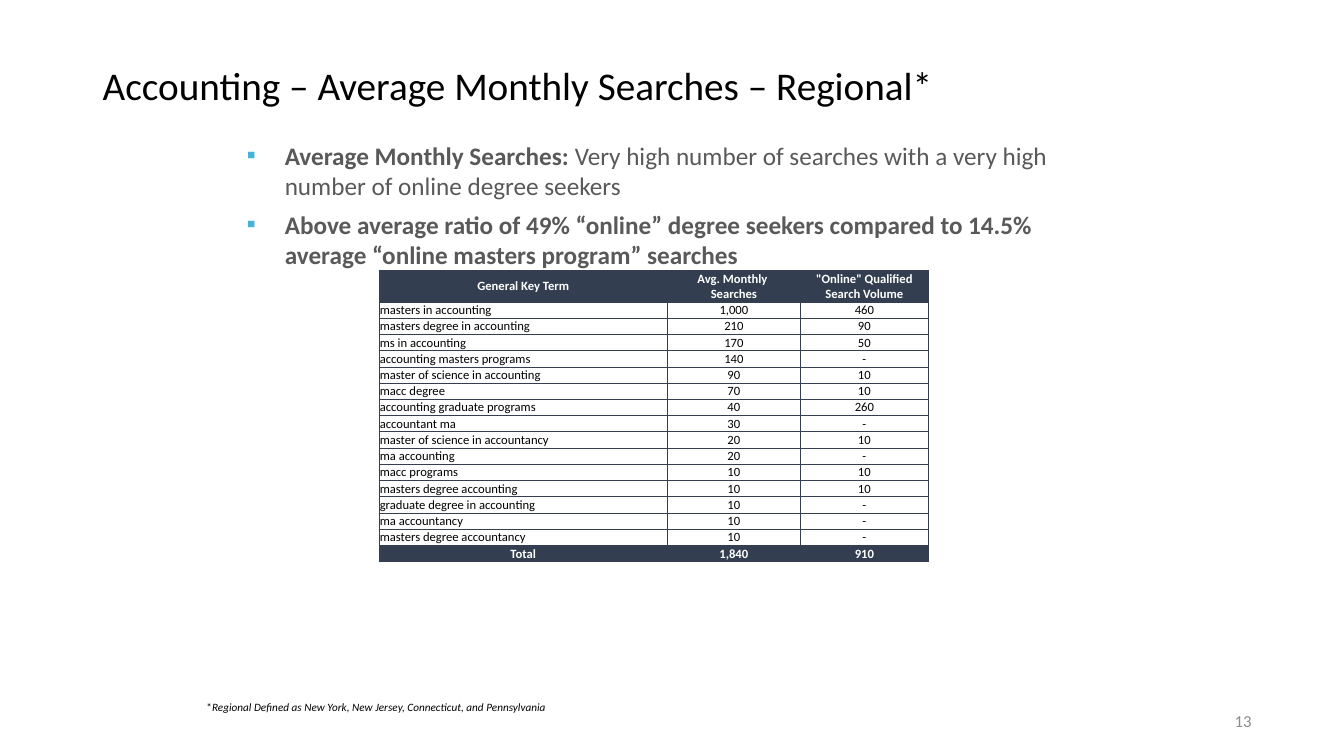
from lxml import etree
from pptx import Presentation
from pptx.dml.color import RGBColor
from pptx.enum import text
from pptx.oxml import ns
from pptx.util import Pt

NAVY = RGBColor(0x33, 0x3F, 0x50)
GREY = RGBColor(0x59, 0x59, 0x59)
PALE = RGBColor(0x8C, 0x8C, 0x8C)
SKY = RGBColor(0x46, 0xB2, 0xD8)
WHITE = RGBColor(255, 255, 255)
BLACK = RGBColor(0, 0, 0)

TITLE = "Accounting – Average Monthly Searches – Regional*"
BULLETS = [
    [("Average Monthly Searches: ", True),
     ("Very high number of searches with a very high number of online degree seekers", False)],
    [("Above average ratio of 49% “online” degree seekers compared to 14.5% "
      "average “online masters program” searches", True)],
]
HEADER = ("General Key Term", "Avg. Monthly \nSearches", '"Online" Qualified Search Volume')
TERMS = [
    ("masters in accounting", "1,000", "460"),
    ("masters degree in accounting", "210", "90"),
    ("ms in accounting", "170", "50"),
    ("accounting masters programs", "140", "-"),
    ("master of science in accounting", "90", "10"),
    ("macc degree", "70", "10"),
    ("accounting graduate programs", "40", "260"),
    ("accountant ma", "30", "-"),
    ("master of science in accountancy", "20", "10"),
    ("ma accounting", "20", "-"),
    ("macc programs", "10", "10"),
    ("masters degree accounting", "10", "10"),
    ("graduate degree in accounting", "10", "-"),
    ("ma accountancy", "10", "-"),
    ("masters degree accountancy", "10", "-"),
]
TOTAL = ("Total", "1,840", "910")
FOOTNOTE = [("*", False),
            ("Regional Defined as New York, New Jersey, Connecticut, and Pennsylvania", True)]
PAGE_NUMBER = "13"

COLUMN_WIDTHS = (206, 95, 91.4)
HEADER_HEIGHT, ROW_HEIGHT = 22.2, 11.6
LEFT, CENTER, RIGHT = text.PP_ALIGN.LEFT, text.PP_ALIGN.CENTER, text.PP_ALIGN.RIGHT


def apply(target, **values):
    for name, value in values.items():
        setattr(target, name, value)


def style(font, size, color, **values):
    apply(font, name="Calibri", size=Pt(size), **values)
    font.color.rgb = color


def place(shape, left, top, width, height):
    apply(shape, left=Pt(left), top=Pt(top), width=Pt(width), height=Pt(height))


def add_bullet(para):
    props = para._p.get_or_add_pPr()
    props.set("marL", str(Pt(27)))
    props.set("indent", str(-Pt(27)))
    color = etree.SubElement(props, ns.qn("a:buClr"))
    etree.SubElement(color, ns.qn("a:srgbClr"), val=str(SKY))
    etree.SubElement(props, ns.qn("a:buFont"), typeface="Calibri")
    etree.SubElement(props, ns.qn("a:buChar"), char="▪")


def add_borders(cell):
    props = cell._tc.get_or_add_tcPr()
    for side in ("lnL", "lnR", "lnT", "lnB"):
        line = etree.SubElement(props, ns.qn("a:" + side), w=str(Pt(0.25)))
        fill = etree.SubElement(line, ns.qn("a:solidFill"))
        etree.SubElement(fill, ns.qn("a:srgbClr"), val=str(NAVY))


def add_title(page):
    title = page.shapes.title
    place(title, 66.2, 28.8, 828, 67.7)
    title.text_frame.text = TITLE
    apply(title.text_frame, vertical_anchor=text.MSO_ANCHOR.MIDDLE,
          auto_size=text.MSO_AUTO_SIZE.NONE)
    para = title.text_frame.paragraphs[0]
    apply(para, alignment=LEFT, line_spacing=0.9)
    style(para.runs[0].font, 28, BLACK)


def add_body(page):
    body = page.placeholders[1]
    place(body, 169.2, 96.5, 628.6, 126)
    frame = body.text_frame
    apply(frame, auto_size=text.MSO_AUTO_SIZE.NONE, vertical_anchor=text.MSO_ANCHOR.TOP)
    for index, spans in enumerate(BULLETS):
        para = frame.add_paragraph() if index else frame.paragraphs[0]
        add_bullet(para)
        apply(para, alignment=LEFT, space_before=Pt(0), space_after=Pt(6))
        for words, bold in spans:
            span = para.add_run()
            span.text = words
            style(span.font, 18, GREY, bold=bold)


def add_searches(page):
    rows = [HEADER, *TERMS, TOTAL]
    last = len(rows) - 1
    height = HEADER_HEIGHT + last * ROW_HEIGHT
    table = page.shapes.add_table(len(rows), len(HEADER), Pt(270.7), Pt(193),
                                  Pt(sum(COLUMN_WIDTHS)), Pt(height)).table
    table.horz_banding = False
    for column, width in zip(table.columns, COLUMN_WIDTHS):
        column.width = Pt(width)
    for r, values in enumerate(rows):
        table.rows[r].height = Pt(ROW_HEIGHT if r else HEADER_HEIGHT)
        strong = r in (0, last)
        for c, value in enumerate(values):
            cell = table.cell(r, c)
            cell.text = value
            apply(cell, margin_left=Pt(0.6), margin_right=Pt(0.6), margin_top=Pt(0.6),
                  margin_bottom=Pt(0),
                  vertical_anchor=text.MSO_ANCHOR.BOTTOM if r else text.MSO_ANCHOR.MIDDLE)
            add_borders(cell)
            if strong:
                cell.fill.solid()
                cell.fill.fore_color.rgb = NAVY
            else:
                cell.fill.background()
            for para in cell.text_frame.paragraphs:
                para.alignment = CENTER if strong or c else LEFT
                style(para.runs[0].font, 9, WHITE if strong else BLACK, bold=strong)


def add_label(page, bounds, spans, size, color, alignment, wrap, anchor):
    box = page.shapes.add_textbox(*map(Pt, bounds))
    apply(box.text_frame, word_wrap=wrap, vertical_anchor=anchor)
    para = box.text_frame.paragraphs[0]
    para.alignment = alignment
    for words, italic in spans:
        span = para.add_run()
        span.text = words
        style(span.font, size, color, italic=italic)


def main():
    deck = Presentation()
    apply(deck, slide_width=Pt(960), slide_height=Pt(540))
    page = deck.slides.add_slide(deck.slide_layouts[1])
    add_title(page)
    add_body(page)
    add_searches(page)
    add_label(page, (140.4, 496.8, 260.6, 17.3), FOOTNOTE, 8, BLACK, LEFT, False,
              text.MSO_ANCHOR.TOP)
    add_label(page, (678.2, 500.4, 223, 28.8), [(PAGE_NUMBER, False)], 12, PALE, RIGHT, True,
              text.MSO_ANCHOR.MIDDLE)
    deck.save("out.pptx")


if __name__ == "__main__":
    main()
